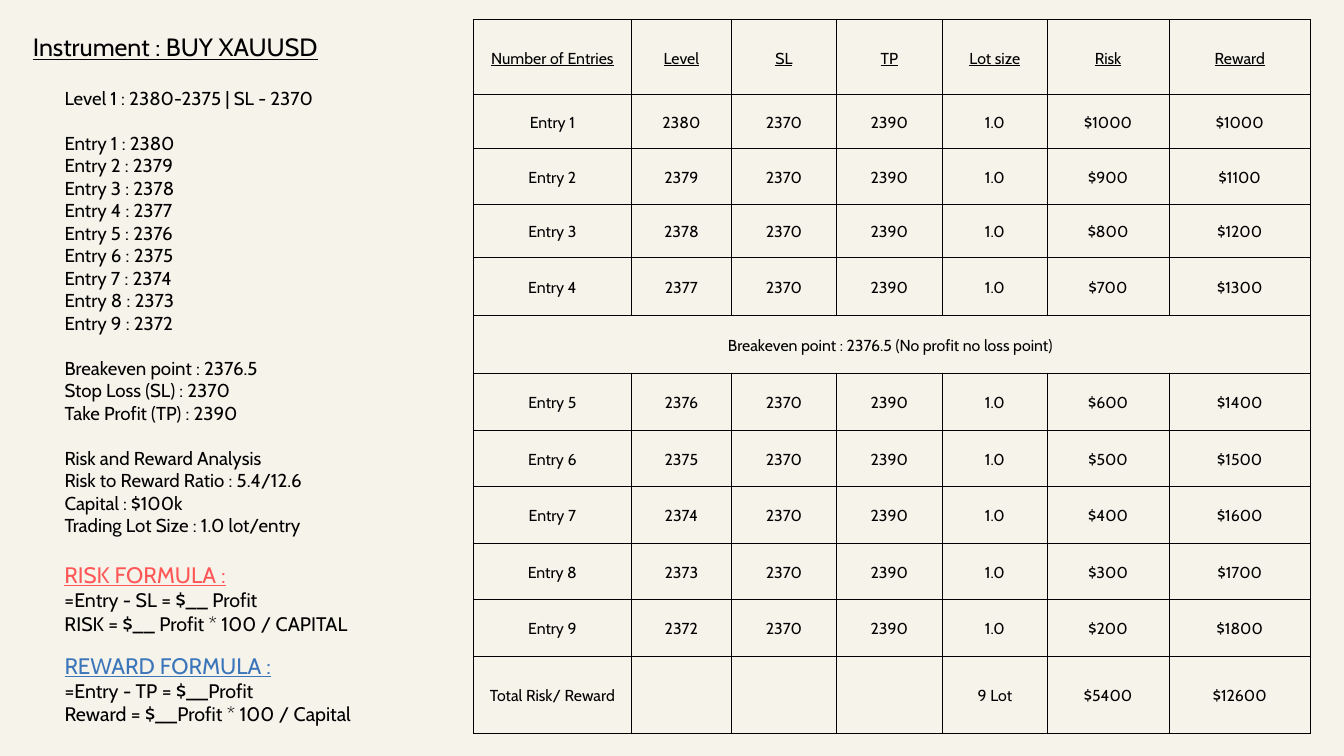
from lxml import etree
from pptx import Presentation
from pptx.dml.color import RGBColor
from pptx.enum.text import MSO_ANCHOR, MSO_AUTO_SIZE, PP_ALIGN
from pptx.oxml.ns import qn
from pptx.util import Inches, Pt

CENTER = PP_ALIGN.CENTER
MIDDLE = MSO_ANCHOR.MIDDLE
FIT_SHAPE = MSO_AUTO_SIZE.SHAPE_TO_FIT_TEXT

SLIDE_WIDTH, SLIDE_HEIGHT = Inches(20), Inches(11.25)
FONT = "Cabin"
CREAM, BLACK, RED, BLUE = "F6F3EB", "000000", "FF5757", "3B75BA"
BODY_LEFT = 4.8
CELL_MARGIN = Inches(0.21)

STOP_LOSS, TAKE_PROFIT = 2370, 2390
FIRST_LEVEL, ENTRY_COUNT, UNITS_PER_LOT = 2380, 9, 100
LEVELS = [FIRST_LEVEL - step for step in range(ENTRY_COUNT)]
ENTRIES_ABOVE_BREAKEVEN = 4

HEADERS = ["Number of Entries", "Level", "SL", "TP", "Lot size", "Risk", "Reward"]
BREAKEVEN_NOTE = "Breakeven point : 2376.5 (No profit no loss point) "
COLUMN_SHARES = [11.7, 7.5, 7.75, 7.95, 7.75, 9.1, 10.5]
ROW_SHARES = [9.96, 7.02, 7.47, 7.02, 7.64, 7.64, 7.56, 7.47, 7.47, 7.47, 7.47, 10.31]

PLAN_GROUPS = [
    ["Level 1 : 2380-2375 | SL - 2370"],
    [f"Entry {number} : {level}" for number, level in enumerate(LEVELS, 1)],
    [
        "Breakeven point : 2376.5",
        f"Stop Loss (SL) : {STOP_LOSS}",
        f"Take Profit (TP) : {TAKE_PROFIT}",
    ],
    [
        "Risk and Reward Analysis",
        "Risk to Reward Ratio : 5.4/12.6",
        "Capital : $100k",
        "Trading Lot Size : 1.0 lot/entry",
    ],
]


def color(hex_code):
    """Turn a hex string into a colour."""
    return RGBColor.from_string(hex_code)


def across(share):
    """Give a percentage of the slide's width."""
    return int(SLIDE_WIDTH * share / 100)


def down(share):
    """Give a percentage of the slide's height."""
    return int(SLIDE_HEIGHT * share / 100)


def write(paragraph, text, size, leading, hex_code=BLACK, underline=False):
    """Fill a paragraph with text in the slide's font."""
    paragraph.text = text
    paragraph.line_spacing = Pt(leading)
    font = paragraph.font
    font.name, font.size, font.underline = FONT, Pt(size), underline
    font.color.rgb = color(hex_code)


def add_text_frame(slide, left, top, width, height):
    """Add a text box without margins and return its frame."""
    box = slide.shapes.add_textbox(across(left), down(top), across(width), down(height))
    frame = box.text_frame
    frame.word_wrap, frame.auto_size = True, FIT_SHAPE
    frame.margin_left = frame.margin_right = frame.margin_top = frame.margin_bottom = 0
    return frame


def next_paragraph(frame):
    """Return the empty first paragraph, or a new one after the text."""
    first = frame.paragraphs[0]
    return frame.add_paragraph() if first.runs else first


def add_trade_plan(slide):
    """Add the list of levels, limits and ratios, one gap between groups."""
    leading = 24.1
    frame = add_text_frame(slide, BODY_LEFT, 11.47, 25.4, 59.38)
    for group_index, group in enumerate(PLAN_GROUPS):
        for line_index, line in enumerate(group):
            paragraph = next_paragraph(frame)
            write(paragraph, line, 20, leading)
            if group_index and not line_index:
                paragraph.space_before = Pt(leading)


def add_formula(slide, top, width, heading, hex_code, lines):
    """Add a coloured heading with its formula lines."""
    frame = add_text_frame(slide, BODY_LEFT, top, width, 9.51)
    write(next_paragraph(frame), heading, 24, 28.8, hex_code, True)
    for line in lines:
        write(next_paragraph(frame), line, 21, 25.2)


def outline_cell(cell):
    """Draw thin black borders on all sides of a cell."""
    properties = cell._tc.get_or_add_tcPr()
    for side in ("a:lnL", "a:lnR", "a:lnT", "a:lnB"):
        border = etree.SubElement(properties, qn(side), w=str(Pt(0.75)))
        fill = etree.SubElement(border, qn("a:solidFill"))
        etree.SubElement(fill, qn("a:srgbClr"), val=BLACK)


def fill_cell(cell, text, underline):
    """Format a table cell and write its centred text."""
    outline_cell(cell)
    cell.fill.background()
    cell.vertical_anchor = MIDDLE
    cell.margin_left = cell.margin_right = CELL_MARGIN
    cell.margin_top = cell.margin_bottom = CELL_MARGIN
    paragraph = cell.text_frame.paragraphs[0]
    paragraph.alignment = CENTER
    write(paragraph, text, 17, 23.8, underline=underline)


def trade_rows():
    """Work out the table's rows from the levels and limits."""
    risks = [(level - STOP_LOSS) * UNITS_PER_LOT for level in LEVELS]
    rewards = [(TAKE_PROFIT - level) * UNITS_PER_LOT for level in LEVELS]
    entries = [
        [f"Entry {number}", str(level), str(STOP_LOSS), str(TAKE_PROFIT), "1.0",
         f"${risk}", f"${reward}"]
        for number, (level, risk, reward) in enumerate(zip(LEVELS, risks, rewards), 1)
    ]
    breakeven = [BREAKEVEN_NOTE] + [""] * (len(HEADERS) - 1)
    totals = ["Total Risk/ Reward", "", "", "", f"{ENTRY_COUNT} Lot",
              f"${sum(risks)}", f"${sum(rewards)}"]
    return [HEADERS, *entries[:ENTRIES_ABOVE_BREAKEVEN], breakeven,
            *entries[ENTRIES_ABOVE_BREAKEVEN:], totals]


def add_trade_table(slide):
    """Add the table of entries with its breakeven row and totals."""
    rows = trade_rows()
    table = slide.shapes.add_table(
        len(rows), len(HEADERS), across(35.25), down(2.58),
        across(sum(COLUMN_SHARES)), down(sum(ROW_SHARES)),
    ).table
    table.first_row = table.horz_banding = False
    for column, share in zip(table.columns, COLUMN_SHARES):
        column.width = across(share)
    for row, share in zip(table.rows, ROW_SHARES):
        row.height = down(share)
    for row_index, row in enumerate(rows):
        for column_index, text in enumerate(row):
            fill_cell(table.cell(row_index, column_index), text, row is HEADERS)
    breakeven_row = ENTRIES_ABOVE_BREAKEVEN + 1
    table.cell(breakeven_row, 0).merge(table.cell(breakeven_row, len(HEADERS) - 1))


def main():
    """Build the trading plan slide and save it."""
    presentation = Presentation()
    presentation.slide_width, presentation.slide_height = SLIDE_WIDTH, SLIDE_HEIGHT
    slide = presentation.slides.add_slide(presentation.slide_layouts[6])
    slide.background.fill.solid()
    slide.background.fill.fore_color.rgb = color(CREAM)

    title = add_text_frame(slide, 2.45, 4.18, 28.2, 4)
    write(next_paragraph(title), "Instrument : BUY XAUUSD", 26.8, 32.1, underline=True)
    add_trade_plan(slide)
    add_formula(slide, 74.22, 22.8, "RISK FORMULA :", RED,
                ["=Entry - SL = $__ Profit", "RISK = $__ Profit * 100 / CAPITAL"])
    add_formula(slide, 86.22, 23.45, "REWARD FORMULA :", BLUE,
                ["=Entry - TP = $__Profit", "Reward = $__Profit * 100 / Capital"])
    add_trade_table(slide)
    presentation.save("out.pptx")


if __name__ == "__main__":
    main()
